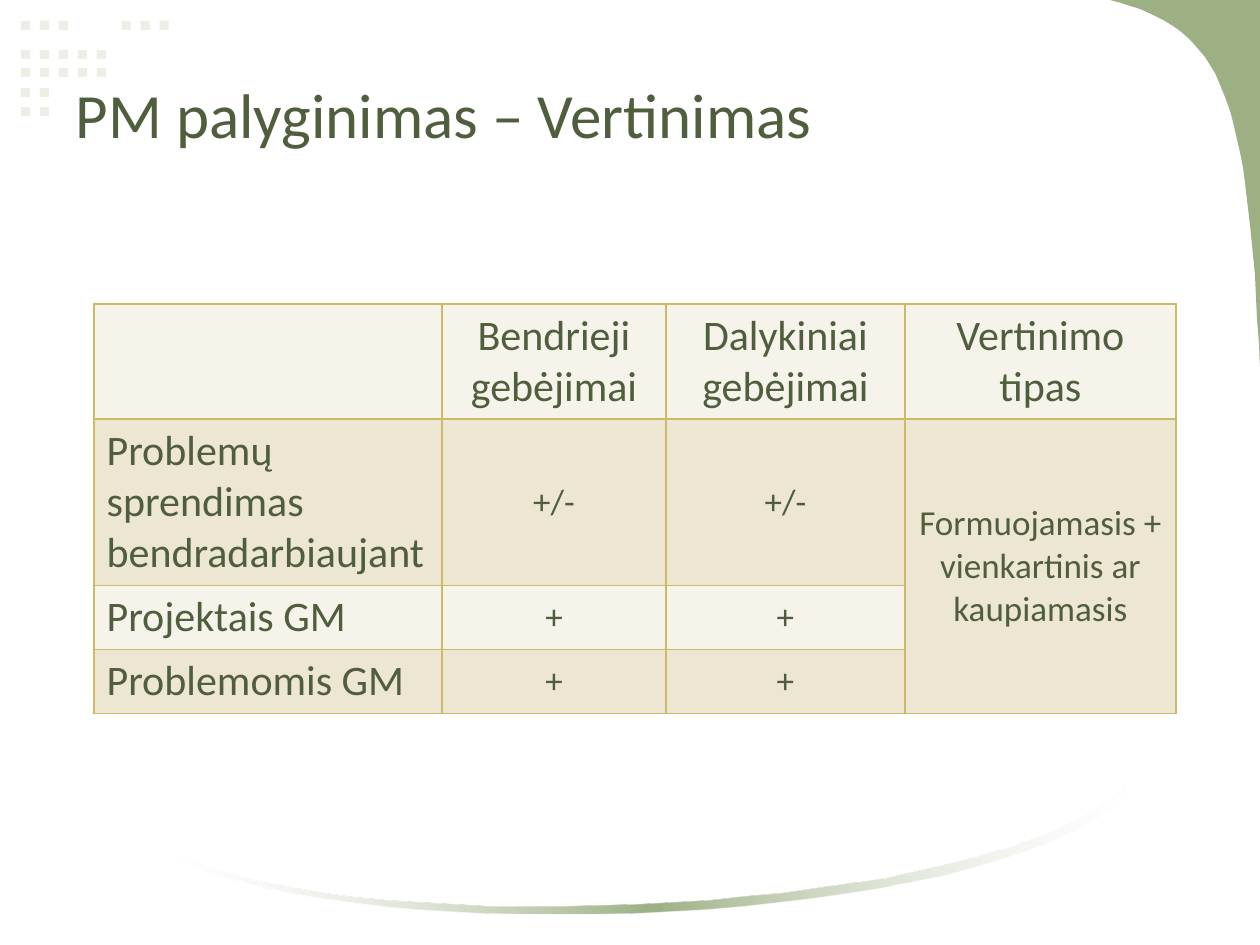
import pptx
import pptx.dml.color
import pptx.enum.shapes
import pptx.enum.text
import pptx.oxml
import pptx.oxml.ns
import pptx.util

PX = 914400 / 126  # EMU in one px
ALIGN = pptx.enum.text.PP_ALIGN
ANCHOR = pptx.enum.text.MSO_ANCHOR


class Theme:
    font = "Calibri"
    text = "4F5E3C"
    green = "9CB084"
    dot = "EBEFE6"
    white = "FFFFFF"
    border = "CEB966"
    bands = ("F6F3EA", "EDE6D3")
    title_size, label_size, mark_size = 36, 24, 20


def emu(px):
    return pptx.util.Emu(round(px * PX))


def rgb(value):
    return pptx.dml.color.RGBColor.from_string(value)


def xml(body):
    return pptx.oxml.parse_xml(body.replace(">", f' {pptx.oxml.ns.nsdecls("a")}>', 1))


def write(tf, text, size, align=ALIGN.LEFT, color=Theme.text):
    p = tf.paragraphs[0]
    p.alignment = align
    r = p.add_run()
    r.text = text
    r.font.name = Theme.font
    r.font.size = pptx.util.Pt(size)
    r.font.color.rgb = rgb(color)


def paint(s, color):
    s.shadow.inherit = False
    s.line.fill.background()
    s.fill.solid()
    s.fill.fore_color.rgb = rgb(color)


def curve(box, p0, p1, p2, p3, steps=32):
    """Points on a cubic curve whose control points are relative to the box."""
    points = []
    for i in range(steps + 1):
        t = i / steps
        u = 1 - t
        weights = (u**3, 3 * u * u * t, 3 * u * t * t, t**3)
        points.append(tuple(
            origin + sum(w * p[axis] for w, p in zip(weights, (p0, p1, p2, p3)))
            for axis, origin in enumerate(box[:2])))
    return points


def outline(slide, points, color):
    builder = slide.shapes.build_freeform(*points[0], scale=PX)
    builder.add_line_segments(points[1:], close=True)
    s = builder.convert_to_shape()
    paint(s, color)
    return s


def add_dots(slide, box):
    x, y, w, h = box
    size, pitch = 9, 19
    rows = {0: (0, 1, 2, 5.3, 6.3, 7.3), 29: range(5), 47: range(5),
            67: range(2), 86: range(2)}
    for top, columns in rows.items():
        for column in columns:
            s = slide.shapes.add_shape(
                pptx.enum.shapes.MSO_SHAPE.RECTANGLE,
                emu(x + column * pitch), emu(y + top), emu(size), emu(size))
            paint(s, Theme.dot)


def add_corner(slide, box):
    x, y, w, h = box
    edge = curve(box, (w, h), (w - 13, 94), (w - 35, 29), (0, 0))
    outline(slide, [(x + w, y)] + edge, Theme.green)


def add_swoosh(slide, box):
    w = box[2]
    outer = curve(box, (w, 8), (810, 141), (181, 161), (0, 71))
    inner = curve(box, (0, 68), (186, 155), (816, 127), (w, 0))
    s = outline(slide, outer + inner, Theme.green)
    # The band fades to see-through white at both ends
    faded = f'<a:srgbClr val="{Theme.white}"><a:alpha val="30000"/></a:srgbClr>'
    solid = f'<a:srgbClr val="{Theme.green}"/>'
    stops = "".join(f'<a:gs pos="{pos}">{color}</a:gs>' for pos, color in
                    ((0, faded), (50000, solid), (100000, faded)))
    fill = s.fill._xPr.find(pptx.oxml.ns.qn("a:solidFill"))
    fill.getparent().replace(fill, xml(
        f'<a:gradFill><a:gsLst>{stops}</a:gsLst><a:lin ang="0" scaled="0"/></a:gradFill>'))


def add_title(slide, box, text):
    s = slide.shapes.title
    s.left, s.top, s.width, s.height = map(emu, box)
    tf = s.text_frame
    tf.word_wrap = True
    tf.auto_size = pptx.enum.text.MSO_AUTO_SIZE.NONE
    tf.vertical_anchor = ANCHOR.BOTTOM
    tf.margin_left = tf.margin_right = tf.margin_top = tf.margin_bottom = pptx.util.Inches(0.1)
    write(tf, text, Theme.title_size)


def format_cell(cell, color):
    cell.fill.solid()
    cell.fill.fore_color.rgb = rgb(color)
    cell.vertical_anchor = ANCHOR.MIDDLE
    # Borders stand before the fill
    for i, side in enumerate(("lnL", "lnR", "lnT", "lnB")):
        cell._tc.get_or_add_tcPr().insert(i, xml(
            f'<a:{side} w="12700"><a:solidFill><a:srgbClr val="{Theme.border}"/>'
            f'</a:solidFill></a:{side}>'))


def add_comparison(slide, box, rows, widths, heights):
    frame = slide.shapes.add_table(len(rows), len(widths), *map(emu, box))
    table = frame.table
    table.first_row = table.horz_banding = False
    for column, width in zip(table.columns, widths):
        column.width = emu(width)
    for row, height in zip(table.rows, heights):
        row.height = emu(height)
    for i, texts in enumerate(rows):
        for j, text in enumerate(texts):
            cell = table.cell(i, j)
            format_cell(cell, Theme.bands[i % 2])
            is_label = i == 0 or j == 0
            if text:
                write(cell.text_frame, text,
                      Theme.label_size if is_label else Theme.mark_size,
                      ALIGN.LEFT if j == 0 else ALIGN.CENTER)
    # One assessment type covers all three methods
    last = len(widths) - 1
    table.cell(1, last).merge(table.cell(len(rows) - 1, last))


def main():
    prs = pptx.Presentation()
    prs.slide_width, prs.slide_height = emu(1260), emu(945)
    slide = prs.slides.add_slide(prs.slide_layouts[5])

    # Decoration
    add_dots(slide, (21, 21, 147, 95))
    add_corner(slide, (1110, 0, 150, 367))
    add_swoosh(slide, (179, 788, 945, 126))

    # Content
    add_title(slide, (63, 6, 1178, 158), "PM palyginimas – Vertinimas")
    rows = [
        ("", "Bendrieji gebėjimai", "Dalykiniai gebėjimai", "Vertinimo tipas"),
        ("Problemų sprendimas bendradarbiaujant", "+/-", "+/-",
         "Formuojamasis + vienkartinis ar kaupiamasis"),
        ("Projektais GM", "+", "+", ""),
        ("Problemomis GM", "+", "+", ""),
    ]
    add_comparison(slide, (94, 304, 1082, 409), rows,
                   widths=(348, 224, 239, 271), heights=(115, 166, 64, 64))
    prs.save("out.pptx")


if __name__ == "__main__":
    main()
